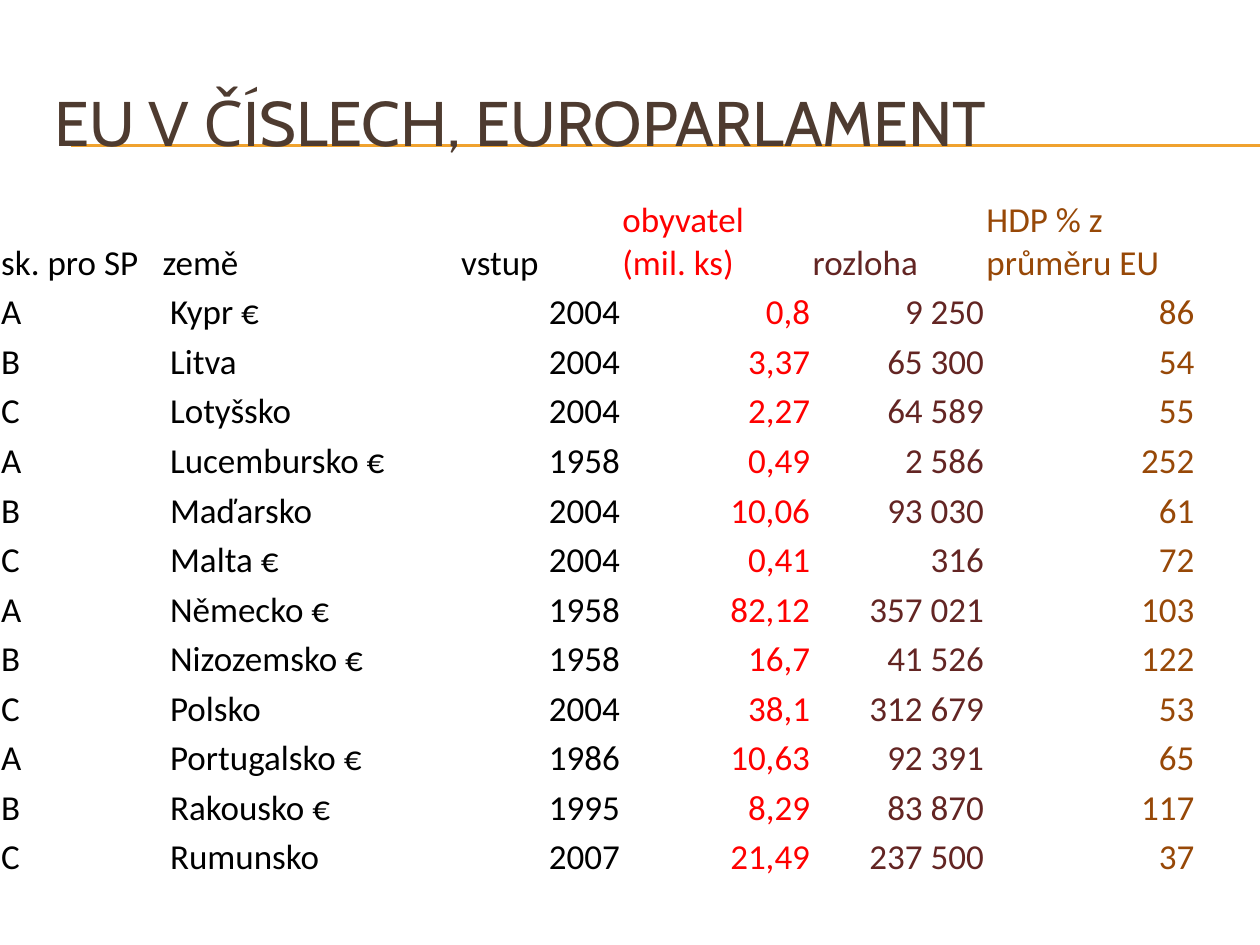
from itertools import cycle

from lxml.etree import SubElement
from pptx import Presentation
from pptx.dml.color import RGBColor
from pptx.enum.shapes import MSO_CONNECTOR
from pptx.enum.text import MSO_ANCHOR, PP_ALIGN
from pptx.oxml.ns import qn
from pptx.util import Inches, Pt

BLACK = RGBColor(0x00, 0x00, 0x00)
RED = RGBColor(0xFF, 0x00, 0x00)
MAROON = RGBColor(0x63, 0x25, 0x23)
BROWN = RGBColor(0x97, 0x48, 0x07)
TITLE_BROWN = RGBColor(0x4E, 0x3B, 0x30)
ORANGE = RGBColor(0xF0, 0xA2, 0x2E)

# Header, width in inches, colour and body alignment of each column
COLUMNS = [
    ("sk. pro SP", 1.28, BLACK, PP_ALIGN.LEFT),
    ("země", 2.37, BLACK, PP_ALIGN.LEFT),
    ("vstup", 1.28, BLACK, PP_ALIGN.RIGHT),
    ("obyvatel (mil. ks)", 1.51, RED, PP_ALIGN.RIGHT),
    ("rozloha", 1.38, MAROON, PP_ALIGN.RIGHT),
    ("HDP % z průměru EU", 1.67, BROWN, PP_ALIGN.RIGHT),
]
COUNTRIES = [
    ("Kypr €", "2004", "0,8", "9 250", "86"),
    ("Litva", "2004", "3,37", "65 300", "54"),
    ("Lotyšsko", "2004", "2,27", "64 589", "55"),
    ("Lucembursko €", "1958", "0,49", "2 586", "252"),
    ("Maďarsko", "2004", "10,06", "93 030", "61"),
    ("Malta €", "2004", "0,41", "316", "72"),
    ("Německo €", "1958", "82,12", "357 021", "103"),
    ("Nizozemsko €", "1958", "16,7", "41 526", "122"),
    ("Polsko", "2004", "38,1", "312 679", "53"),
    ("Portugalsko €", "1986", "10,63", "92 391", "65"),
    ("Rakousko €", "1995", "8,29", "83 870", "117"),
    ("Rumunsko", "2007", "21,49", "237 500", "37"),
]
COUNTRY_COLUMN = 1
TABLE_TOP, TABLE_HEIGHT, HEADER_HEIGHT = 1.47, 5.51, 0.79
CELL_FORMAT = {
    "vertical_anchor": MSO_ANCHOR.BOTTOM,
    "margin_left": Inches(0.01),
    "margin_right": Inches(0.01),
    "margin_top": Inches(0.01),
    "margin_bottom": 0,
}


def set_attributes(target, values):
    for name, value in values.items():
        setattr(target, name, value)


def format_text(paragraph, font_name, size, color, alignment):
    paragraph.alignment = alignment
    set_attributes(paragraph.font, {"name": font_name, "size": Pt(size), "bold": False})
    paragraph.font.color.rgb = color


presentation = Presentation()
presentation.slide_width = Inches(10)
presentation.slide_height = Inches(7.5)
slide = presentation.slides.add_slide(presentation.slide_layouts[5])

# Title
title = slide.shapes.title
set_attributes(title, {"left": Inches(0.33), "top": Inches(0.5),
                       "width": Inches(9.5), "height": Inches(0.92)})
title.text_frame.text = "EU V ČÍSLECH, EUROPARLAMENT"
title.text_frame.vertical_anchor = MSO_ANCHOR.MIDDLE
format_text(title.text_frame.paragraphs[0], "Cabin", 36, TITLE_BROWN, PP_ALIGN.LEFT)

# Double rule behind the title
for y in (1.15, 1.16):
    rule = slide.shapes.add_connector(
        MSO_CONNECTOR.STRAIGHT, Inches(0.56), Inches(y), Inches(10), Inches(y))
    rule.line.color.rgb = ORANGE
    rule.line.width = Pt(0.75)
    SubElement(rule.element.spPr, qn("a:effectLst"))
    title.element.addprevious(rule.element)

# Table grid
rows = [[header for header, *_ in COLUMNS]]
rows += [(group, *country) for group, country in zip(cycle("ABC"), COUNTRIES)]
table_width = sum(width for _, width, *_ in COLUMNS)
table = slide.shapes.add_table(
    len(rows), len(COLUMNS), 0, Inches(TABLE_TOP),
    Inches(table_width), Inches(TABLE_HEIGHT)).table
set_attributes(table, {"first_row": False, "horz_banding": False})
for column, (_, width, *_) in zip(table.columns, COLUMNS):
    column.width = Inches(width)
body_height = (TABLE_HEIGHT - HEADER_HEIGHT) / len(COUNTRIES)
for row_index, row in enumerate(table.rows):
    row.height = Inches(body_height if row_index else HEADER_HEIGHT)

# Table cells, without fill or borders
for row_index, values in enumerate(rows):
    for column_index, value in enumerate(values):
        _, _, color, alignment = COLUMNS[column_index]
        cell = table.cell(row_index, column_index)
        cell.text = value
        set_attributes(cell, CELL_FORMAT)
        if row_index and column_index == COUNTRY_COLUMN:
            cell.margin_left = Inches(0.07)
        format_text(cell.text_frame.paragraphs[0], "Calibri", 20, color,
                    alignment if row_index else PP_ALIGN.LEFT)
        for side in ("a:lnL", "a:lnR", "a:lnT", "a:lnB"):
            border = SubElement(cell._tc.get_or_add_tcPr(), qn(side))
            SubElement(border, qn("a:noFill"))
        cell.fill.background()

presentation.save("out.pptx")
